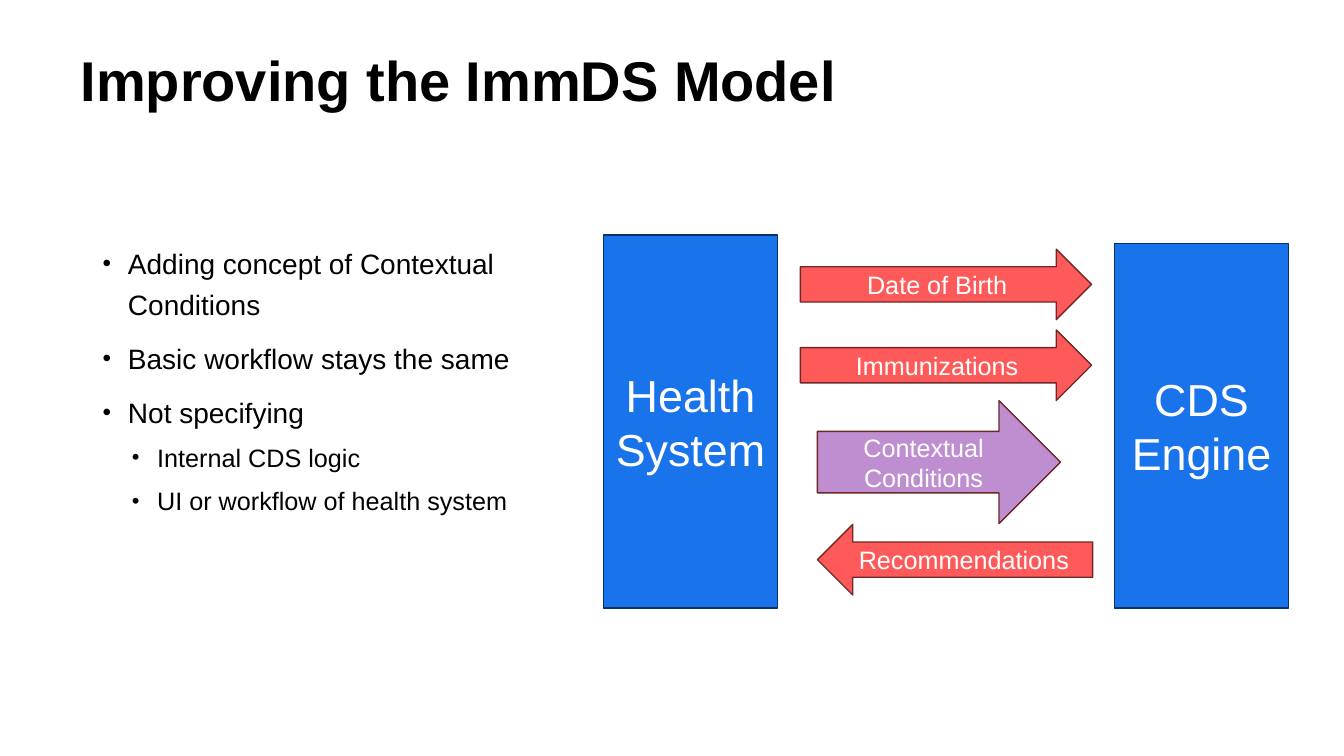
from lxml.etree import SubElement
from pptx import Presentation
from pptx.dml.color import RGBColor
from pptx.enum.shapes import MSO_SHAPE
from pptx.enum.text import MSO_ANCHOR, MSO_AUTO_SIZE, PP_ALIGN
from pptx.oxml.ns import qn
from pptx.util import Pt

COLORS = {
    "text": "000000",
    "label": "FFFFFF",
    "system": "1973EB",
    "system_line": "0B3267",
    "data": "FE5A5A",
    "context": "BF8ED1",
    "arrow_line": "6F2727",
}
FONT = "Arial"
BULLETS = [
    (0, "Adding concept of Contextual Conditions"),
    (0, "Basic workflow stays the same"),
    (0, "Not specifying"),
    (1, "Internal CDS logic"),
    (1, "UI or workflow of health system"),
]
LEVEL_STYLES = [
    {"size": 20, "space": 10, "margin": 18},
    {"size": 18, "space": 5, "margin": 38.9},
]


def color(name):
    """Return the named colour as an RGBColor."""
    return RGBColor.from_string(COLORS[name])


def format_runs(paragraph, size, color_name, bold=False):
    """Set font, size, weight and colour on every run of a paragraph."""
    for run in paragraph.runs:
        run.font.name = FONT
        run.font.size = Pt(size)
        run.font.bold = bold
        run.font.color.rgb = color(color_name)


def place(shape, left, top, width, height):
    """Move and size a shape, given in points."""
    shape.left, shape.top = Pt(left), Pt(top)
    shape.width, shape.height = Pt(width), Pt(height)


def prepare_placeholder(placeholder, box):
    """Place a placeholder and anchor its text at the top."""
    place(placeholder, *box)
    text_frame = placeholder.text_frame
    text_frame.auto_size = MSO_AUTO_SIZE.NONE
    text_frame.vertical_anchor = MSO_ANCHOR.TOP
    text_frame.word_wrap = True
    return text_frame


def add_title(slide, box):
    """Fill the title placeholder."""
    text_frame = prepare_placeholder(slide.shapes.title, box)
    text_frame.text = "Improving the ImmDS Model"
    paragraph = text_frame.paragraphs[0]
    paragraph.alignment = PP_ALIGN.LEFT
    format_runs(paragraph, 40, "text", bold=True)


def add_bullet(paragraph, margin):
    """Give a paragraph a round bullet with a hanging indent."""
    properties = paragraph._p.get_or_add_pPr()
    properties.set("marL", str(Pt(margin)))
    properties.set("indent", str(-Pt(18)))
    SubElement(properties, qn("a:buSzPct"), val="87000")
    SubElement(properties, qn("a:buFont"), typeface=FONT)
    SubElement(properties, qn("a:buChar"), char="•")


def add_points(slide, box):
    """Fill the body placeholder with the two-level list."""
    text_frame = prepare_placeholder(slide.placeholders[1], box)
    text_frame.text = "\n".join(text for level, text in BULLETS)
    for index, (level, text) in enumerate(BULLETS):
        paragraph = text_frame.paragraphs[index]
        style = LEVEL_STYLES[level]
        paragraph.level = level
        add_bullet(paragraph, style["margin"])
        paragraph.line_spacing = 1.2
        paragraph.space_before = Pt(style["space"] if index else 0)
        format_runs(paragraph, style["size"], "text")


def add_labelled_shape(slide, kind, box, text, size, fill, line):
    """Add a filled, outlined shape with a centred label."""
    shape = slide.shapes.add_shape(kind, *(Pt(length) for length in box))
    shape.shadow.inherit = False
    shape.fill.solid()
    shape.fill.fore_color.rgb = color(fill)
    shape.line.color.rgb = color(line)
    shape.line.width = Pt(1)
    text_frame = shape.text_frame
    text_frame.word_wrap = True
    text_frame.vertical_anchor = MSO_ANCHOR.MIDDLE
    text_frame.text = text
    paragraph = text_frame.paragraphs[0]
    paragraph.alignment = PP_ALIGN.CENTER
    format_runs(paragraph, size, "label")


def add_exchange(slide, box):
    """Draw the two systems and the messages that pass between them."""
    left, top, width, height = box
    system_width, arrow_height = 124, 50.4
    systems = [
        ("Health System", left, top),
        ("CDS Engine", left + width - system_width, top + 6),
    ]
    for text, system_left, system_top in systems:
        system_box = (system_left, system_top, system_width, top + height - system_top)
        add_labelled_shape(slide, MSO_SHAPE.RECTANGLE, system_box, text, 32,
                           "system", "system_line")

    right, back = MSO_SHAPE.RIGHT_ARROW, MSO_SHAPE.LEFT_ARROW
    messages = [
        ("Date of Birth", right, "data", 140.4, 10, 208, arrow_height),
        ("Immunizations", right, "data", 140.4, 67.7, 208, arrow_height),
        ("Contextual Conditions", right, "context", 152.6, 118.2, 173.6, 87.8),
        ("Recommendations", back, "data", 152.6, 206.6, 196.6, arrow_height),
    ]
    for text, kind, fill, offset_left, offset_top, arrow_width, thickness in messages:
        arrow_box = (left + offset_left, top + offset_top, arrow_width, thickness)
        add_labelled_shape(slide, kind, arrow_box, text, 18, fill, "arrow_line")


def main():
    """Build the slide and save the presentation."""
    presentation = Presentation()
    presentation.slide_width, presentation.slide_height = Pt(960), Pt(540)
    slide = presentation.slides.add_slide(presentation.slide_layouts[1])
    add_title(slide, (50.4, 28.8, 857.5, 86.4))
    add_points(slide, (66.2, 167.8, 327.6, 318.2))
    add_exchange(slide, (431.3, 168, 489, 266.4))
    presentation.save("out.pptx")


if __name__ == "__main__":
    main()
